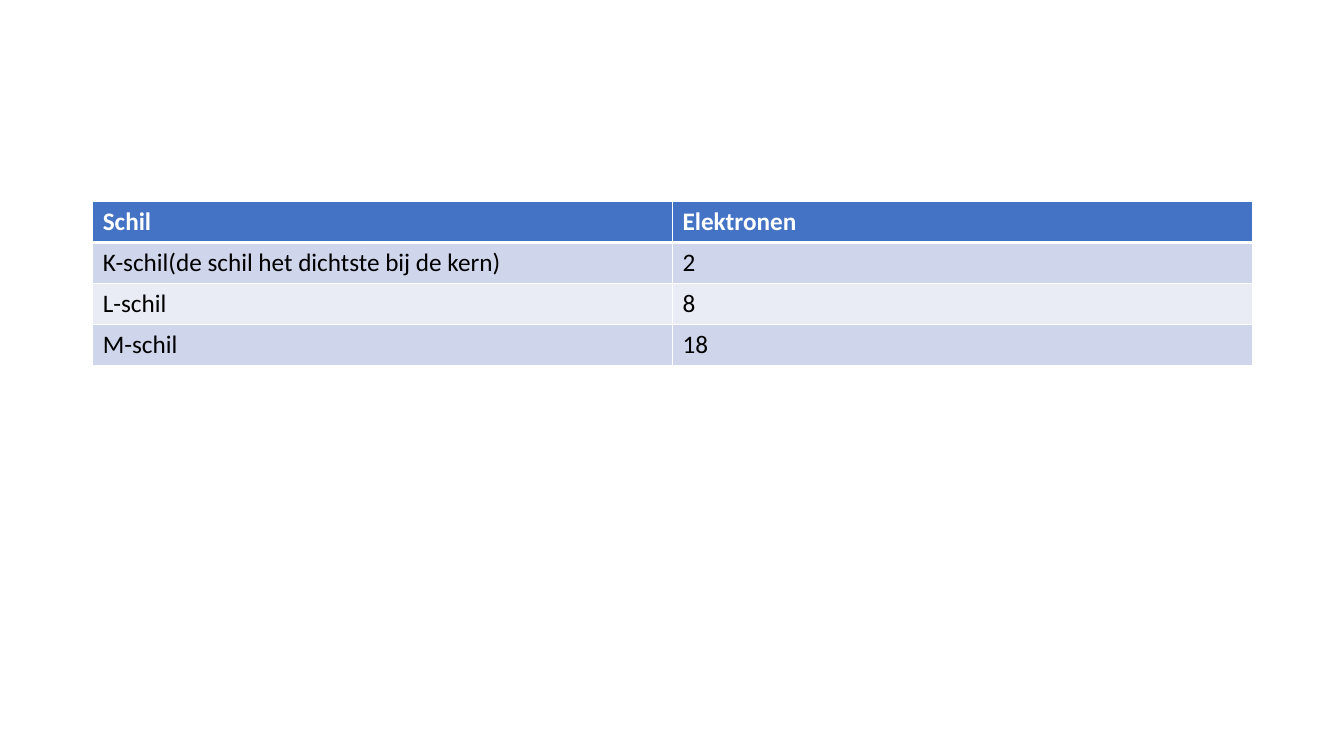
from dataclasses import dataclass

from lxml import etree
from pptx import Presentation
from pptx import util as u
from pptx.dml.color import RGBColor
from pptx.oxml.ns import qn


@dataclass(frozen=True)
class Theme:
    font: str = "Calibri"
    text_size: int = 18
    header_fill: str = "4472C4"
    header_text: str = "FFFFFF"
    body_text: str = "000000"
    bands: tuple = ("CFD5EA", "E9EBF5")
    border: str = "FFFFFF"
    thin: int = 1
    thick: int = 3


THEME = Theme()

SHELLS = [
    ("Schil", "Elektronen"),
    ("K-schil(de schil het dichtste bij de kern)", "2"),
    ("L-schil", "8"),
    ("M-schil", "18"),
]


def write_text(text_frame, text, *, color, bold=False):
    run = text_frame.paragraphs[0].add_run()
    run.text = text
    run.font.name = THEME.font
    run.font.size = u.Pt(THEME.text_size)
    run.font.bold = bold
    run.font.color.rgb = RGBColor.from_string(color)


def set_borders(cell, **widths):
    """Draw the named sides (L, R, T, B) with widths in points."""
    properties = cell._tc.get_or_add_tcPr()
    for position, (side, width) in enumerate(widths.items()):
        line = etree.Element(qn(f"a:ln{side}"), w=str(u.Pt(width)))
        fill = etree.SubElement(line, qn("a:solidFill"))
        etree.SubElement(fill, qn("a:srgbClr"), val=THEME.border)
        properties.insert(position, line)


def add_shell_table(slide, rows, left, top, width, height):
    frame = slide.shapes.add_table(
        len(rows), len(rows[0]),
        u.Inches(left), u.Inches(top), u.Inches(width), u.Inches(height))
    table = frame.table
    for row_index, values in enumerate(rows):
        header = row_index == 0
        fill = THEME.header_fill if header else THEME.bands[(row_index - 1) % 2]
        color = THEME.header_text if header else THEME.body_text
        for column_index, value in enumerate(values):
            cell = table.cell(row_index, column_index)
            cell.fill.solid()
            cell.fill.fore_color.rgb = RGBColor.from_string(fill)
            write_text(cell.text_frame, value, color=color, bold=header)
            set_borders(
                cell, L=THEME.thin, R=THEME.thin,
                T=THEME.thick if row_index == 1 else THEME.thin,
                B=THEME.thick if header else THEME.thin)


def main():
    presentation = Presentation()
    presentation.slide_width = u.Inches(13.33)
    presentation.slide_height = u.Inches(7.5)
    slide = presentation.slides.add_slide(presentation.slide_layouts[6])
    add_shell_table(slide, SHELLS, left=0.92, top=2, width=11.5, height=1.62)
    presentation.save("out.pptx")


if __name__ == "__main__":
    main()
